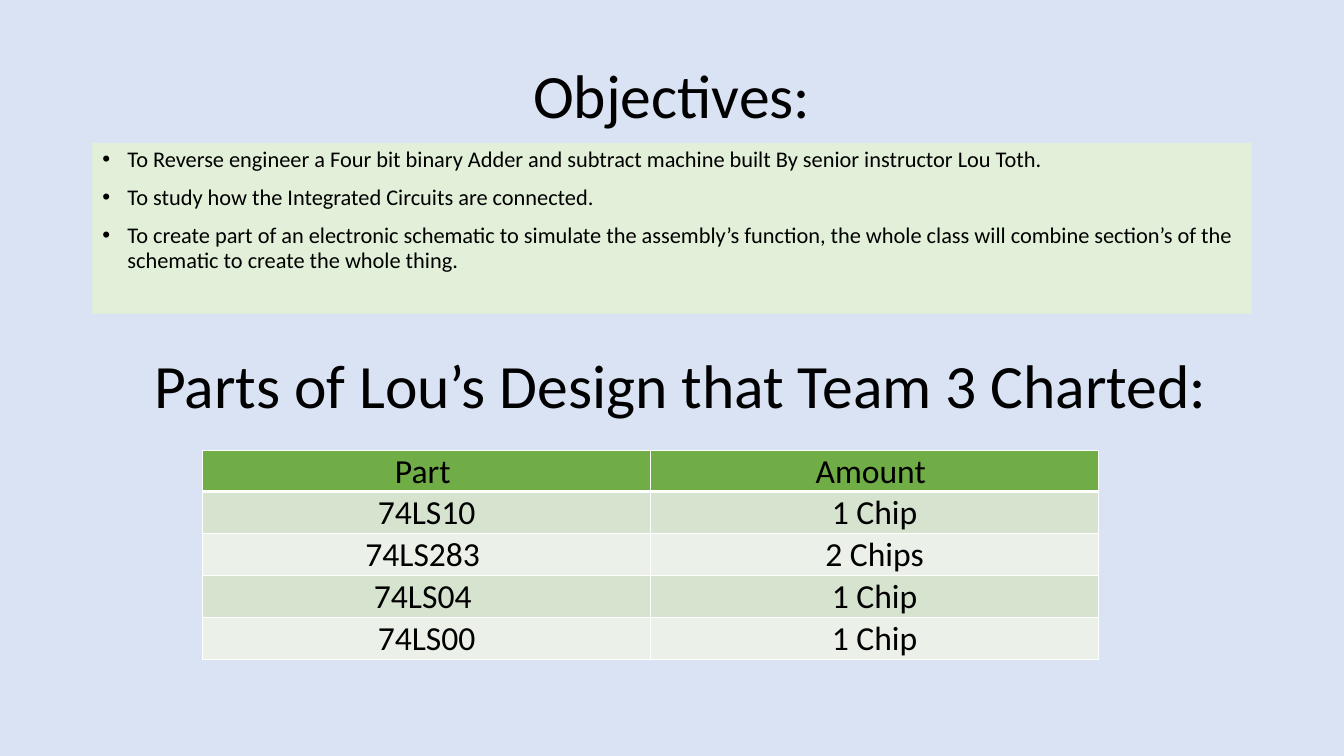
from lxml.etree import SubElement
from pptx import Presentation
from pptx.dml.color import RGBColor
from pptx.enum.shapes import MSO_SHAPE
from pptx.enum.text import MSO_ANCHOR, PP_ALIGN
from pptx.oxml.ns import qn
from pptx.util import Pt


def paint(fill, color):
    fill.solid()
    fill.fore_color.rgb = RGBColor.from_string(color)


def style(para, size, align):
    para.alignment = align
    for run in para.runs:
        run.font.name = "Calibri"
        run.font.size = Pt(size)
        paint(run.font.fill, "000000")


deck = Presentation()
deck.slide_width, deck.slide_height = Pt(960), Pt(540)
slide = deck.slides.add_slide(deck.slide_layouts[6])
paint(slide.background.fill, "DAE3F3")

# Headings
heads = [
    ("Objectives:", 66, 18),
    ("Parts of Lou’s Design that Team 3 Charted:", 72.5, 225.5),
]
for text, left, top in heads:
    frame = slide.shapes.add_textbox(Pt(left), Pt(top), Pt(828), Pt(104.4)).text_frame
    frame.word_wrap = True
    frame.vertical_anchor = MSO_ANCHOR.MIDDLE
    frame.text = text
    para = frame.paragraphs[0]
    para.line_spacing = 0.9
    style(para, 44, PP_ALIGN.CENTER)

# Objectives list
goals = [
    "To Reverse engineer a Four bit binary Adder and subtract machine built By senior instructor Lou Toth.",
    "To study how the Integrated Circuits are connected.",
    "To create part of an electronic schematic to simulate the assembly’s function, "
    "the whole class will combine section’s of the schematic to create the whole thing.",
]
box = slide.shapes.add_shape(MSO_SHAPE.RECTANGLE, Pt(66), Pt(102.3), Pt(828), Pt(121.7))
box.shadow.inherit = False
box.line.fill.background()
paint(box.fill, "E2F0D9")
frame = box.text_frame
frame.word_wrap = True
frame.vertical_anchor = MSO_ANCHOR.TOP
frame.text = "\n".join(goals)
for para in frame.paragraphs:
    para.line_spacing = 0.9
    para.space_before = Pt(10)
    style(para, 16, PP_ALIGN.LEFT)
    props = para._p.get_or_add_pPr()
    props.set("marL", str(Pt(18)))
    props.set("indent", str(-Pt(18)))
    SubElement(props, qn("a:buFont"), typeface="Arial")
    SubElement(props, qn("a:buChar"), char="•")

# Parts table
parts = [
    ("Part ", "Amount "),
    ("74LS10", "1 Chip"),
    ("74LS283 ", "2 Chips"),
    ("74LS04 ", "1 Chip"),
    ("74LS00", "1 Chip"),
]
table = slide.shapes.add_table(5, 2, Pt(144.7), Pt(321.6), Pt(640), Pt(149)).table
for col in table.columns:
    col.width = Pt(320)
for i, row in enumerate(table.rows):
    row.height = Pt(29 if i == 0 else 30)
    shade = "70AD47" if i == 0 else ("EBF1E9", "D5E3CF")[i % 2]
    for cell, text in zip(row.cells, parts[i]):
        cell.text = text
        style(cell.text_frame.paragraphs[0], 24, PP_ALIGN.CENTER)
        cell.vertical_anchor = MSO_ANCHOR.BOTTOM
        cell.margin_left = cell.margin_right = cell.margin_top = Pt(0.7)
        cell.margin_bottom = 0
        # White borders, thick under the header
        props = cell._tc.get_or_add_tcPr()
        for side in "LRTB":
            thick = (i, side) in [(0, "B"), (1, "T")]
            line = SubElement(props, qn("a:ln" + side), w=str(Pt(3 if thick else 1)))
            SubElement(SubElement(line, qn("a:solidFill")), qn("a:srgbClr"), val="FFFFFF")
        paint(cell.fill, shade)

deck.save("out.pptx")
